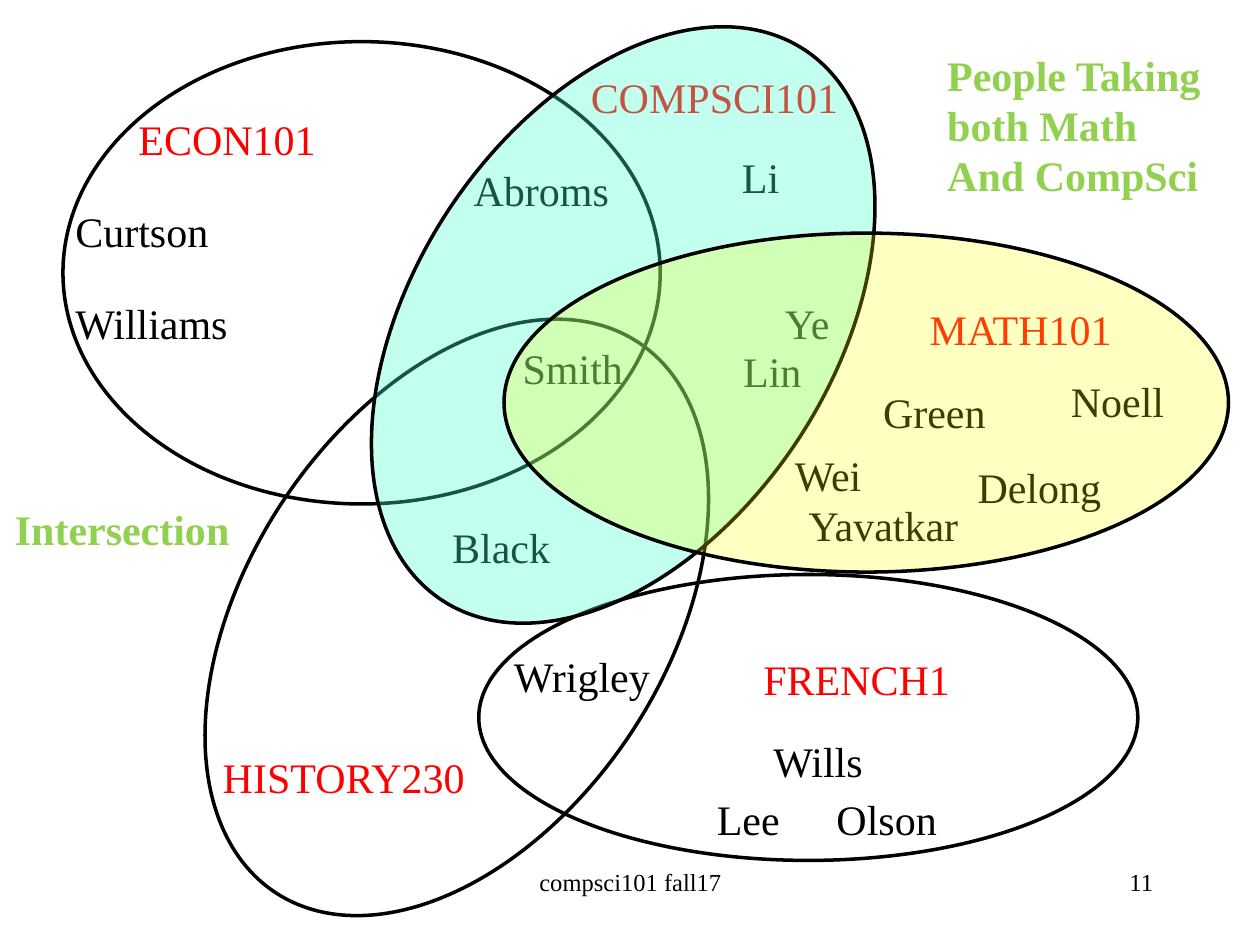
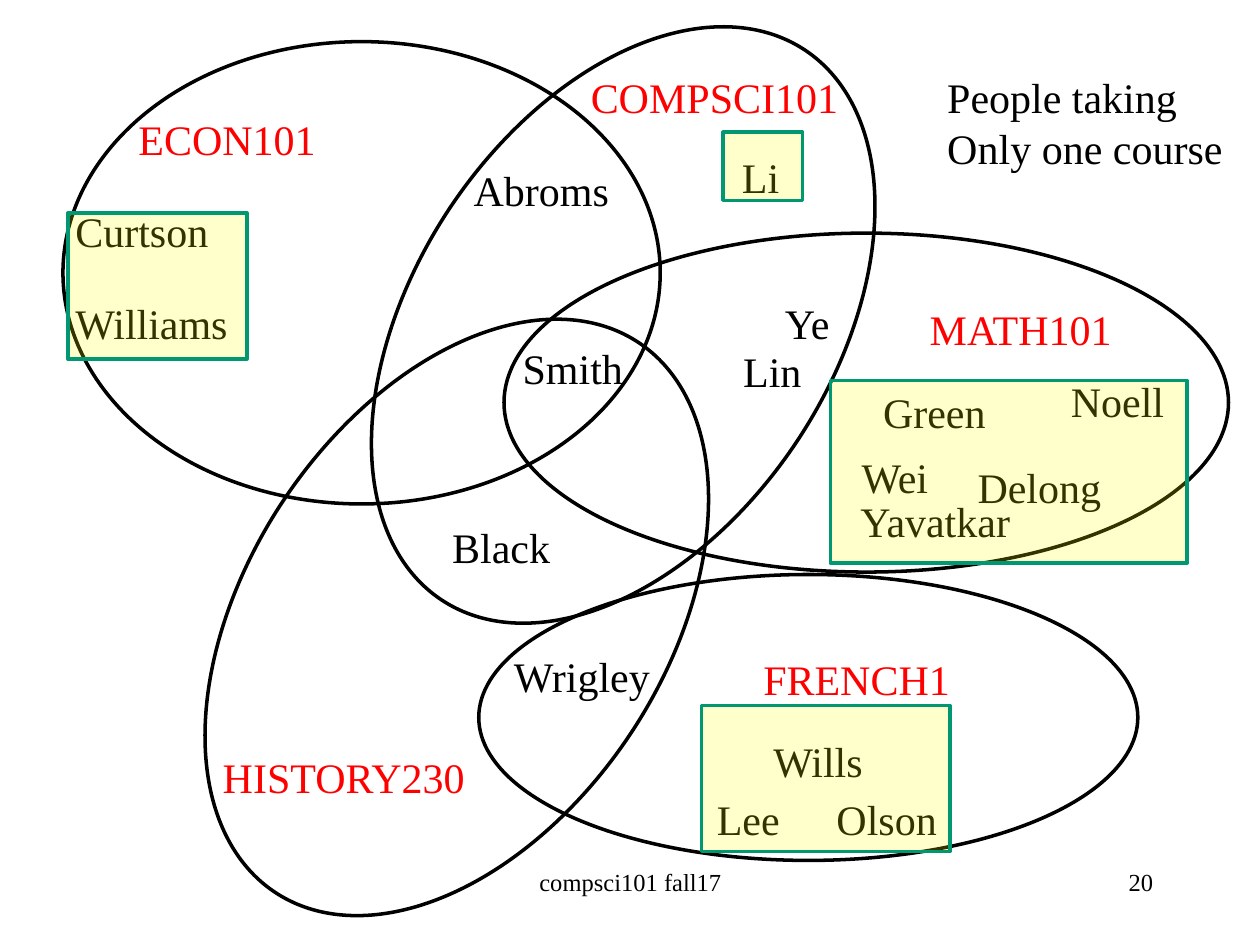
from lxml.etree import SubElement
from pptx import Presentation
from pptx.dml.color import RGBColor
from pptx.enum.shapes import MSO_SHAPE as Preset
from pptx.enum.text import MSO_AUTO_SIZE as AutoSize, PP_ALIGN as Align
from pptx.oxml.ns import qn
from pptx.util import Pt

BLACK = RGBColor(0x00, 0x00, 0x00)
WHITE = RGBColor(0xFF, 0xFF, 0xFF)
RED = RGBColor(0xFF, 0x00, 0x00)
GREEN = RGBColor(0x92, 0xD0, 0x50)
TEAL = RGBColor(0x00, 0x97, 0x71)
AQUA = RGBColor(0x47, 0xFF, 0xD1)
YELLOW = RGBColor(0xFF, 0xFF, 0x00)

FONT = "Times New Roman"
LABEL_HEIGHT = 36
TILT = 123.4

HISTORY_SET = (72.7, 233.3, 376.6, 239)
FRENCH_SET = (273.6, 328.3, 376.6, 163.4)
ECON_SET = (36, 23.8, 341.3, 264.2)
COMPSCI_SET = (167.8, 66.2, 376.6, 239)
MATH_SET = (288, 133.2, 414, 193.7)

COURSES = {
    "COMPSCI101": (330.5, 37.4, 157.7),
    "MATH101": (524.2, 169.9, 119.5),
    "ECON101": (72, 61.2, 116.6),
    "HISTORY230": (120.2, 426.2, 154.1),
    "FRENCH1": (429.1, 370.1, 122.4),
}
STUDENTS = {
    "Smith": (291.6, 192.2, 72),
    "Green": (497.5, 217.4, 73.4),
    "Ye": (441.4, 166.3, 40.3),
    "Li": (416.9, 82.8, 36),
    "Black": (251.3, 294.5, 71.3),
    "Lee": (402.5, 450, 51.1),
    "Olson": (470.9, 450, 72.7),
    "Wills": (434.9, 416.9, 66.2),
    "Wrigley": (286.6, 367.9, 92.9),
    "Abroms": (263.5, 90.7, 92.9),
    "Williams": (36, 166.3, 102.2),
    "Curtson": (36, 113.8, 91.4),
    "Lin": (417.6, 193.7, 48.2),
    "Wei": (447.1, 253.4, 52.6),
    "Yavatkar": (455, 282.2, 100.8),
    "Delong": (551.5, 259.9, 85.7),
    "Noell": (604.8, 211, 68.4),
}
MOVED_STUDENTS = {"Wei": (485.3, 254.2, 52.6), "Yavatkar": (484.6, 279.4, 100.8)}
ONE_COURSE_AREAS = [
    (474.5, 217.4, 203.8, 104.4),
    (38.9, 121.7, 102.2, 83.5),
    (401, 403.2, 141.8, 83.5),
    (413.3, 75.6, 45.4, 38.9),
]


def apply_format(target, values):
    for name, value in values.items():
        setattr(target, name, value)


def add_text(page, lines, place, color=BLACK, size=24, bold=False, align=Align.LEFT, wrap=False):
    box = page.shapes.add_textbox(*map(Pt, place))
    frame = box.text_frame
    fit = AutoSize.NONE if wrap else AutoSize.SHAPE_TO_FIT_TEXT
    apply_format(frame, {"word_wrap": wrap, "auto_size": fit})
    for index, line in enumerate(lines):
        para = frame.add_paragraph() if index else frame.paragraphs[0]
        para.alignment = align
        span = para.add_run()
        span.text = line
        apply_format(span.font, {"name": FONT, "size": Pt(size), "bold": bold})
        span.font.color.rgb = color
    return box


def add_outline(page, preset, place, line=BLACK, fill=None, opacity=100, rotation=0):
    shape = page.shapes.add_shape(preset, *map(Pt, place))
    shape.rotation = rotation
    shape.shadow.inherit = False
    shape.line.color.rgb = line
    shape.line.width = Pt(2)
    if fill is None:
        shape.fill.background()
        return
    shape.fill.solid()
    shape.fill.fore_color.rgb = fill
    color = shape._element.spPr.find(qn("a:solidFill"))[0]
    SubElement(color, qn("a:alpha"), val=str(opacity * 1000))


def add_labels(page, labels, color):
    for name, place in labels.items():
        add_text(page, [name], (*place, LABEL_HEIGHT), color)


def add_diagram(page, students, compsci_fill=None, math_fill=None):
    add_outline(page, Preset.OVAL, HISTORY_SET, rotation=TILT)
    add_outline(page, Preset.OVAL, FRENCH_SET)
    add_outline(page, Preset.OVAL, ECON_SET)
    add_labels(page, COURSES, RED)
    add_labels(page, students, BLACK)
    add_outline(page, Preset.OVAL, COMPSCI_SET, fill=compsci_fill, opacity=33, rotation=TILT)
    add_outline(page, Preset.OVAL, MATH_SET, fill=math_fill, opacity=24)


def add_footer(page, number):
    add_text(page, ["compsci101 fall17"], (246.2, 491.8, 228.2, 36),
             size=14, align=Align.CENTER, wrap=True)
    add_text(page, [str(number)], (516.2, 491.8, 149.8, 36),
             size=14, align=Align.RIGHT, wrap=True)


def build_intersection(page):
    add_diagram(page, STUDENTS, AQUA, YELLOW)
    add_text(page, ["People Taking", "both Math", "And CompSci"],
             (534.2, 24.5, 166.3, 94.3), GREEN, bold=True)
    box = add_text(page, ["Intersection"], (1.4, 284.4, 138.2, LABEL_HEIGHT), GREEN, bold=True)
    box.fill.solid()
    box.fill.fore_color.rgb = WHITE
    add_footer(page, 11)


def build_one_course(page):
    add_diagram(page, STUDENTS | MOVED_STUDENTS)
    add_text(page, ["People taking", "Only one course"], (534.2, 37.4, 173.5, 65.5))
    for area in ONE_COURSE_AREAS:
        add_outline(page, Preset.RECTANGLE, area, TEAL, YELLOW, 20)
    add_footer(page, 20)


def main():
    deck = Presentation()
    apply_format(deck, {"slide_width": Pt(720), "slide_height": Pt(540)})
    blank = deck.slide_layouts[6]
    for build in (build_intersection, build_one_course):
        build(deck.slides.add_slide(blank))
    deck.save("out.pptx")


if __name__ == "__main__":
    main()
